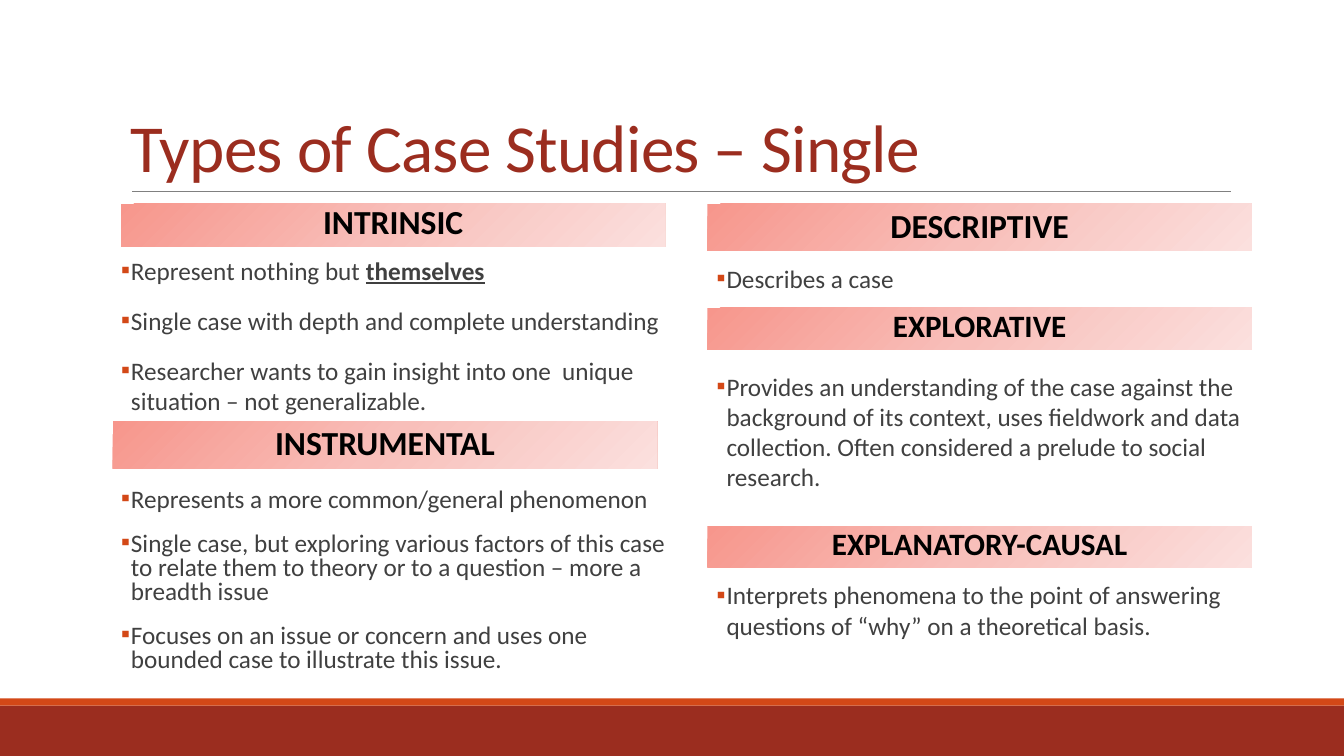
from copy import deepcopy

from lxml.etree import SubElement
from pptx import Presentation
from pptx.dml.color import RGBColor
from pptx.enum.shapes import MSO_CONNECTOR, MSO_SHAPE
from pptx.enum.text import MSO_ANCHOR as ANCHOR, MSO_AUTO_SIZE as AUTO, PP_ALIGN as ALIGN
from pptx.oxml.ns import qn
from pptx.util import Cm, Pt

RED = RGBColor(0x9B, 0x2D, 0x1F)
ORANGE = RGBColor(0xD3, 0x48, 0x17)
GRAY = RGBColor(0x80, 0x80, 0x80)
DARK = RGBColor(0x40, 0x40, 0x40)
BLACK = RGBColor(0, 0, 0)
BAND_STOPS = [(0, RGBColor(0xF7, 0x96, 0x8C)),
              (0.5, RGBColor(0xF8, 0xBF, 0xBA)),
              (1, RGBColor(0xFB, 0xE0, 0xDE))]
FONT = "Calibri"
COL_W = 13.72

LEFT = [
    dict(name="INTRINSIC", band=(3.05, 5.13, COL_W, 1.09), band_spacing=0.8,
         body=(3.05, 6.3, COL_W, 9.37),
         items=[["Represent nothing but ", ("themselves", True)],
                ["Single case with depth and complete understanding"],
                ["Researcher wants to gain insight into one  unique situation – not generalizable."]]),
    dict(name="INSTRUMENTAL", band=(2.84, 10.62, COL_W, 1.19),
         body=(3.05, 12.19, COL_W, 5.38), spacing=0.8,
         items=[["Represents a more common/general phenomenon"],
                ["Single case, but exploring various factors of this case to relate them "
                 "to theory or to a question – more a breadth issue"],
                ["Focuses on an issue or concern and uses one bounded case to illustrate this issue."]]),
]
RIGHT = [
    dict(name="DESCRIPTIVE", band=(17.83, 5.13, COL_W, 1.19),
         body=(18.06, 6.5, COL_W, 1.22), items=[["Describes a case"]]),
    dict(name="EXPLORATIVE", band=(17.83, 7.75, COL_W, 1.07), band_size=22.2, band_spacing=0.8,
         body=(18.06, 9.22, COL_W, 3.43),
         items=[["Provides an understanding of the case against the background of its context, "
                 "uses fieldwork and data collection. Often considered a prelude to social research."]]),
    dict(name="EXPLANATORY-CAUSAL", band=(17.83, 13.26, COL_W, 1.04), band_size=22.2, band_spacing=0.8,
         body=(18.06, 14.48, COL_W, 2.41),
         items=[["Interprets phenomena to the point of answering questions of “why” "
                 "on a theoretical basis."]]),
]


def place(sp, box):
    sp.left, sp.top, sp.width, sp.height = map(Cm, box)


def add_bullet(p):
    pPr = p._p.get_or_add_pPr()
    pPr.set("marL", str(Cm(0.25)))
    pPr.set("indent", str(-Cm(0.25)))
    color = SubElement(pPr, qn("a:buClr"))
    SubElement(color, qn("a:srgbClr"), val=str(ORANGE))
    SubElement(pPr, qn("a:buFont"), typeface=FONT)
    SubElement(pPr, qn("a:buChar"), char="▪")


def write(sp, paragraphs, size=18, color=DARK, bold=False, align=ALIGN.LEFT,
          anchor=ANCHOR.TOP, spacing=1.0, bullet=False, inset=0.25, track=0):
    tf = sp.text_frame
    tf.word_wrap = True
    tf.auto_size = AUTO.NONE
    tf.vertical_anchor = anchor
    tf.margin_left = tf.margin_right = Cm(inset)
    tf.margin_top = tf.margin_bottom = Cm(0.13)
    for i, runs in enumerate(paragraphs):
        p = tf.add_paragraph() if i else tf.paragraphs[0]
        p.alignment = align
        p.line_spacing = spacing
        p.space_before = Pt(12 if i else 0)
        p.space_after = Pt(2)
        if bullet:
            add_bullet(p)
        for run in runs:
            text, strong = (run, False) if isinstance(run, str) else run
            r = p.add_run()
            r.text = text
            r.font.name = FONT
            r.font.size = Pt(size)
            r.font.color.rgb = color
            r.font.bold = bold or strong
            r.font.underline = strong
            if track:
                r._r.get_or_add_rPr().set("spc", str(track))


def fill_band(sp):
    sp.fill.gradient()
    stops = sp._element.spPr.find(".//" + qn("a:gsLst"))
    stops.append(deepcopy(stops[0]))
    for stop, (position, color) in zip(sp.fill.gradient_stops, BAND_STOPS):
        stop.position = position
        stop.color.rgb = color
    sp.fill.gradient_angle = 315
    sp.line.fill.background()


def add_section(band, body, section):
    place(band, section["band"])
    fill_band(band)
    write(band, [[section["name"]]], size=section.get("band_size", 24), color=BLACK,
          bold=True, align=ALIGN.CENTER, anchor=ANCHOR.MIDDLE,
          spacing=section.get("band_spacing", 0.9))
    place(body, section["body"])
    write(body, section["items"], spacing=section.get("spacing", 1.0), bullet=True, inset=0)


def add_left_column(s):
    for i, section in enumerate(LEFT):
        add_section(s.placeholders[2 * i + 1], s.placeholders[2 * i + 2], section)


def add_right_column(s):
    for section in RIGHT:
        band = s.shapes.add_shape(MSO_SHAPE.RECTANGLE, *map(Cm, section["band"]))
        band.shadow.inherit = False
        body = s.shapes.add_textbox(*map(Cm, section["body"]))
        add_section(band, body, section)


def add_frame(s):
    for box, color in [((0, 17.78, 33.87, 1.27), RED), ((0, 17.6, 33.87, 0.18), ORANGE)]:
        sp = s.shapes.add_shape(MSO_SHAPE.RECTANGLE, *map(Cm, box))
        sp.shadow.inherit = False
        sp.fill.solid()
        sp.fill.fore_color.rgb = color
        sp.line.fill.background()
    rule = s.shapes.add_connector(MSO_CONNECTOR.STRAIGHT, *map(Cm, (3.33, 4.83, 31.01, 4.83)))
    rule.line.color.rgb = GRAY
    rule.line.width = Pt(0.5)
    SubElement(rule._element.spPr, qn("a:effectLst"))


def add_title(s):
    place(s.shapes.title, (3.05, 0.79, 27.94, 4.04))
    write(s.shapes.title, [["Types of Case Studies – Single"]], size=48, color=RED,
          anchor=ANCHOR.BOTTOM, spacing=0.85, track=-50)


def main():
    prs = Presentation()
    prs.slide_width, prs.slide_height = Cm(33.87), Cm(19.05)
    s = prs.slides.add_slide(prs.slide_layouts.get_by_name("Comparison"))
    add_frame(s)
    add_title(s)
    add_left_column(s)
    add_right_column(s)
    prs.save("out.pptx")


if __name__ == "__main__":
    main()
